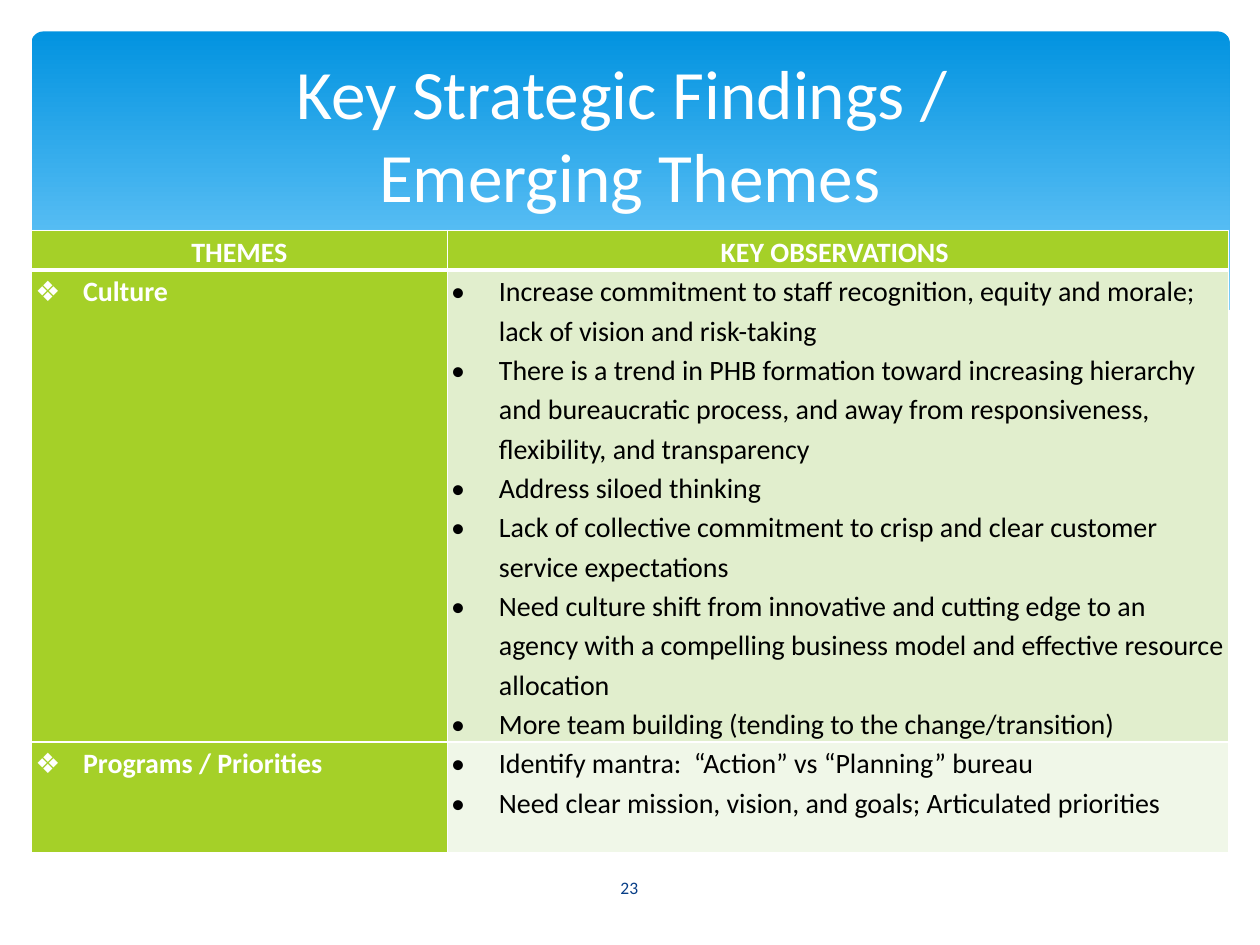
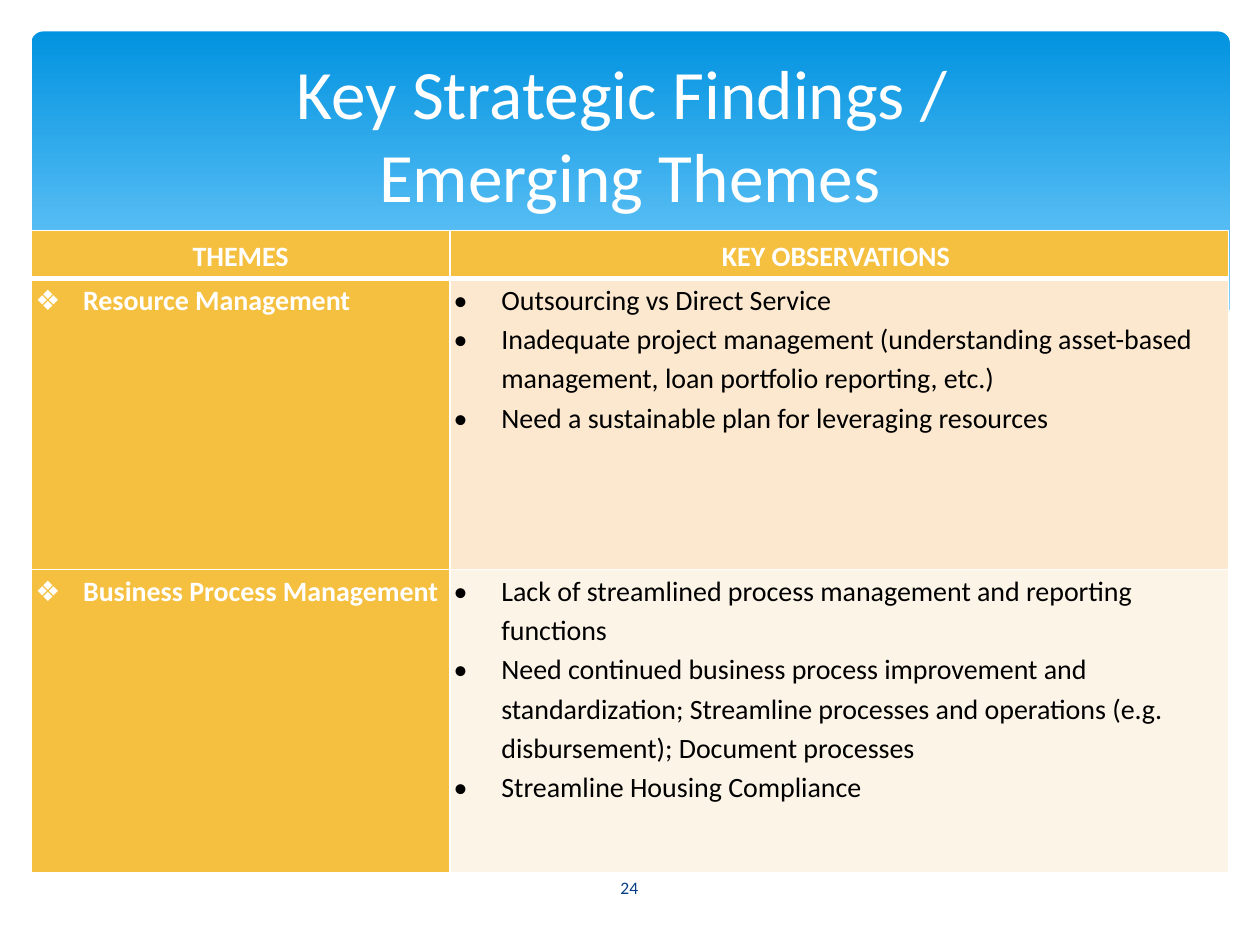
from itertools import pairwise
from math import cos, pi

from lxml.etree import SubElement
from pptx import Presentation
from pptx.dml.color import RGBColor
from pptx.enum.shapes import MSO_SHAPE as Shape
from pptx.enum.text import MSO_ANCHOR as Anchor, MSO_AUTO_SIZE as AutoSize, PP_ALIGN as Align
from pptx.oxml.ns import qn
from pptx.util import Inches, Pt

COLORS = {
    "white": "FFFFFF", "black": "000000", "number": "073E87",
    "band_top": "0293E0", "band_bottom": "83D3FE", "wave": "C6E7FC",
    "green": "A5D028", "green_mid": "E1EECD", "green_pale": "F0F7E8",
    "gold": "F5C040", "gold_mid": "FBE8CF", "gold_pale": "FDF4E8",
}
FONT = "Calibri"
TITLE_SIZE, TABLE_SIZE, NUMBER_SIZE = Pt(39.6), Pt(16), Pt(10)
TITLE = "Key Strategic Findings / \vEmerging Themes"
HEADINGS = ["THEMES", "KEY OBSERVATIONS "]
THEME_BULLET, OBSERVATION_BULLET = "❖", "•"
BULLET_INDENT = Inches(0.38)
CELL_MARGIN = Inches(0.03)
THIN_RULE, HEADING_RULE = Pt(1), Pt(3)

BAND_LEFT, BAND_TOP, BAND_WIDTH, BAND_HEIGHT = 0.25, 0.25, 9.51, 2.7
PAGE_LEFT, PAGE_RIGHT, PAGE_EDGE_BOTTOM = 0.23, 9.77, 3.29
EASE_STEPS = 10

WAVES = [
    {"fill": "wave", "opacity": 29,
     "turns": [(9.75, 2), (6.61, 2.65), (8.1, 2.78), (9.76, 2.47)]},
    {"fill": "wave", "opacity": 40,
     "turns": [(8.93, 2.73), (3.8, 1.86), (2.86, 1.91), (8.1, 2.79)]},
    {"turns": [(3.09, 1.95), (4.1, 1.87), (9.07, 2.72)]},
    {"turns": [(6.13, 2.57), (9.75, 1.85)]},
    {"fill": "white", "opacity": 100,
     "turns": [(PAGE_LEFT, 2.13), (1.77, 1.84), (8.1, 2.77), (PAGE_RIGHT, 2.46),
               (PAGE_RIGHT, PAGE_EDGE_BOTTOM), (PAGE_LEFT, PAGE_EDGE_BOTTOM)]},
]

FINDINGS = [
    {"number": "23", "accent": "green", "widths": [3.3, 6.2], "heights": [0.31, 3.68, 0.88],
     "themes": {
         "Culture": [
             "Increase commitment to staff recognition, equity and morale; lack of vision and risk-taking",
             "There is a trend in PHB formation toward increasing hierarchy and bureaucratic process, "
             "and away from responsiveness, flexibility, and transparency",
             "Address siloed thinking",
             "Lack of collective commitment to crisp and clear customer service expectations",
             "Need culture shift from innovative and cutting edge to an agency with a compelling "
             "business model and effective resource allocation",
             "More team building (tending to the change/transition)"],
         "Programs / Priorities": [
             "Identify mantra:  “Action” vs “Planning” bureau",
             "Need clear mission, vision, and goals; Articulated priorities"]}},
    {"number": "24", "accent": "gold", "widths": [3.32, 6.18], "heights": [0.38, 2.31, 2.41],
     "themes": {
         "Resource Management": [
             "Outsourcing vs Direct Service",
             "Inadequate project management (understanding asset-based management, "
             "loan portfolio reporting, etc.)",
             "Need a sustainable plan for leveraging resources"],
         "Business Process Management": [
             "Lack of streamlined process management and reporting functions",
             "Need continued business process improvement and standardization; Streamline processes "
             "and operations (e.g. disbursement); Document processes",
             "Streamline Housing Compliance"]}},
]


def style_text(paragraph, color, size, bold=None, align=None):
    paragraph.alignment = align
    for run in paragraph.runs:
        run.font.name = FONT
        run.font.size = size
        run.font.bold = bold
        run.font.color.rgb = RGBColor.from_string(COLORS[color])


def fill_cell(cell, lines, fill, color, bold, bullet=None):
    cell.margin_left = cell.margin_right = CELL_MARGIN
    cell.margin_top = cell.margin_bottom = 0
    cell.vertical_anchor = Anchor.TOP if bullet else Anchor.MIDDLE
    cell_props = cell._tc.get_or_add_tcPr()
    for side in "LRTB":
        rule = HEADING_RULE if side == "B" and not bullet else THIN_RULE
        border = SubElement(cell_props, qn(f"a:ln{side}"), w=str(rule))
        SubElement(SubElement(border, qn("a:solidFill")), qn("a:srgbClr"), val=COLORS["white"])
    cell.fill.solid()
    cell.fill.fore_color.rgb = RGBColor.from_string(COLORS[fill])
    cell.text_frame.text = "\n".join(lines)
    for paragraph in cell.text_frame.paragraphs:
        paragraph.line_spacing = 1.15
        style_text(paragraph, color, TABLE_SIZE, bold, None if bullet else Align.CENTER)
        if bullet:
            paragraph_props = paragraph._p.get_or_add_pPr()
            paragraph_props.set("marL", str(BULLET_INDENT))
            paragraph_props.set("indent", str(-BULLET_INDENT))
            SubElement(paragraph_props, qn("a:buFont"), typeface=FONT)
            SubElement(paragraph_props, qn("a:buChar"), char=bullet)


prs = Presentation()
prs.slide_width, prs.slide_height = Inches(10), Inches(7.5)
layout = prs.slide_layouts[5]
title_style = next(prs.slide_master.element.iter(qn("p:titleStyle")))
next(title_style.iter(qn("a:defRPr"))).set("sz", str(int(TITLE_SIZE.pt * 100)))
slides = [prs.slides.add_slide(layout) for _ in FINDINGS]

canvas = slides[0].shapes
band = canvas.add_shape(Shape.ROUNDED_RECTANGLE, Inches(BAND_LEFT), Inches(BAND_TOP),
                        Inches(BAND_WIDTH), Inches(BAND_HEIGHT))
band.adjustments[0] = 0.034
band.fill.gradient()
band.fill.gradient_angle = 270
for stop, position, color in zip(band.fill.gradient_stops, (0, 0.9), ("band_top", "band_bottom")):
    stop.position = position
    stop.color.rgb = RGBColor.from_string(COLORS[color])
band.line.fill.background()
backdrop = [band]

for wave in WAVES:
    turns = wave["turns"]
    filled = "fill" in wave
    outline = canvas.build_freeform(Inches(turns[0][0]), Inches(turns[0][1]))
    for (x1, y1), (x2, y2) in pairwise(turns):
        progress = [step / EASE_STEPS for step in range(1, EASE_STEPS + 1)]
        eased = [(1 - cos(pi * t)) / 2 for t in progress]
        outline.add_line_segments(
            [(Inches(x1 + (x2 - x1) * t), Inches(y1 + (y2 - y1) * rise))
             for t, rise in zip(progress, eased)], close=False)
    if filled:
        outline.add_line_segments([], close=True)
    curve = outline.convert_to_shape()
    if filled:
        curve.fill.solid()
        curve.fill.fore_color.rgb = RGBColor.from_string(COLORS[wave["fill"]])
        tint = next(curve.element.spPr.iter(qn("a:srgbClr")))
        SubElement(tint, qn("a:alpha"), val=str(wave["opacity"] * 1000))
        curve.line.fill.background()
    else:
        curve.fill.background()
        curve.line.color.rgb = RGBColor.from_string(COLORS["white"])
        curve.line.width = 0
    backdrop.append(curve)

for depth, part in enumerate(backdrop, start=2):
    part.shadow.inherit = False
    layout.shapes.element.insert(depth, part.element)

for slide, finding in zip(slides, FINDINGS):
    title = slide.shapes.title
    title.left, title.top, title.width, title.height = Inches(0.5), Inches(0.37), Inches(9), Inches(1.37)
    title.text_frame.text = TITLE
    title.text_frame.auto_size = AutoSize.NONE
    title.text_frame.vertical_anchor = Anchor.MIDDLE
    style_text(title.text_frame.paragraphs[0], "white", TITLE_SIZE, align=Align.CENTER)

    widths, heights, accent = finding["widths"], finding["heights"], finding["accent"]
    table = slide.shapes.add_table(len(heights), len(widths), Inches(BAND_LEFT), Inches(1.83),
                                   Inches(sum(widths)), Inches(sum(heights))).table
    for column, width in zip(table.columns, widths):
        column.width = Inches(width)
    for row, height in zip(table.rows, heights):
        row.height = Inches(height)
    for column, heading in enumerate(HEADINGS):
        fill_cell(table.cell(0, column), [heading], accent, "white", True)
    for row, (theme, observations) in enumerate(finding["themes"].items(), start=1):
        shade = f"{accent}_mid" if row % 2 else f"{accent}_pale"
        fill_cell(table.cell(row, 0), [theme], accent, "white", True, THEME_BULLET)
        fill_cell(table.cell(row, 1), observations, shade, "black", False, OBSERVATION_BULLET)

    page_number = slide.shapes.add_textbox(Inches(4.36), Inches(6.84), Inches(1.27), Inches(0.4))
    page_number.text_frame.word_wrap = True
    page_number.text_frame.vertical_anchor = Anchor.MIDDLE
    page_number.text_frame.text = finding["number"]
    style_text(page_number.text_frame.paragraphs[0], "number", NUMBER_SIZE, align=Align.CENTER)

prs.save("out.pptx")
